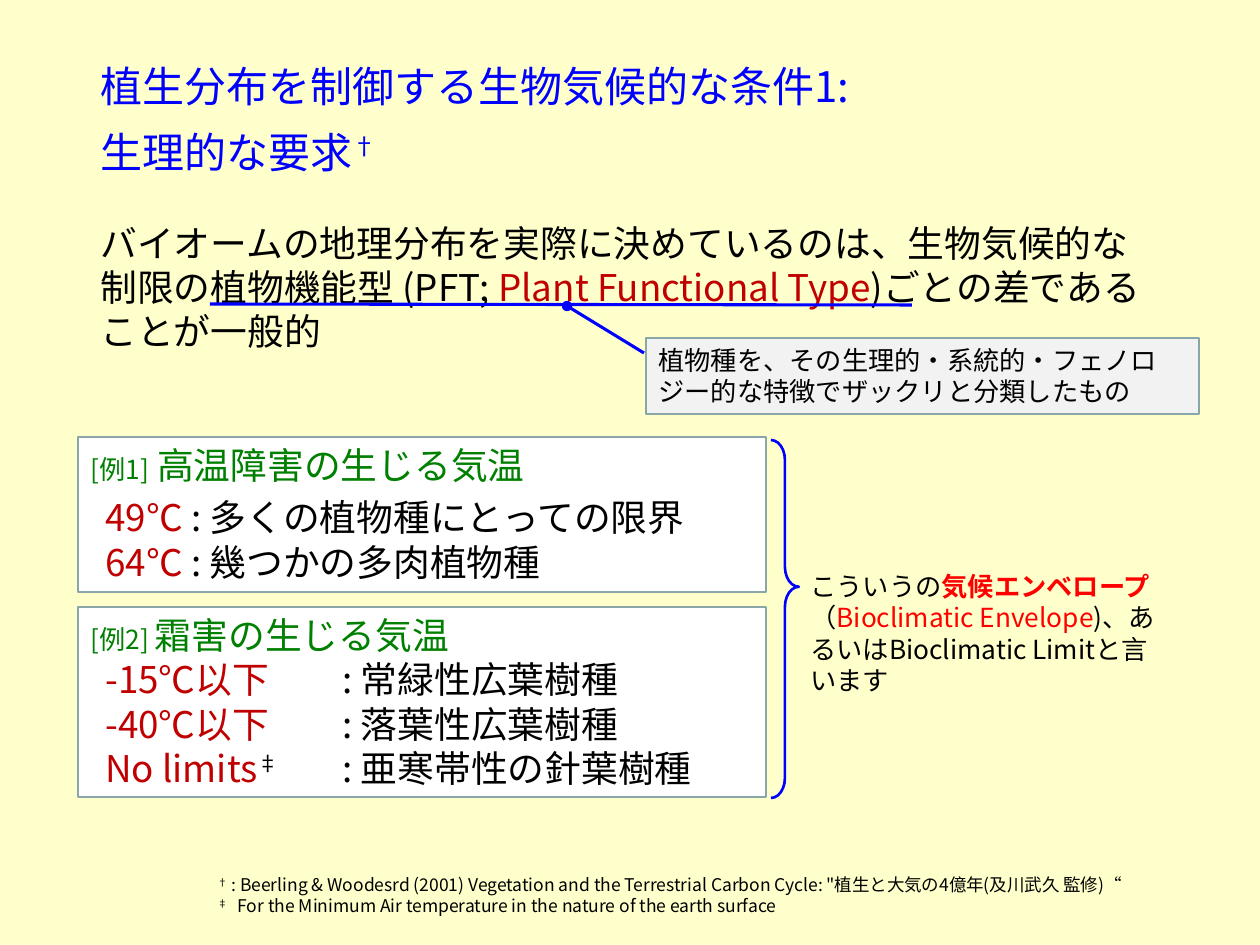
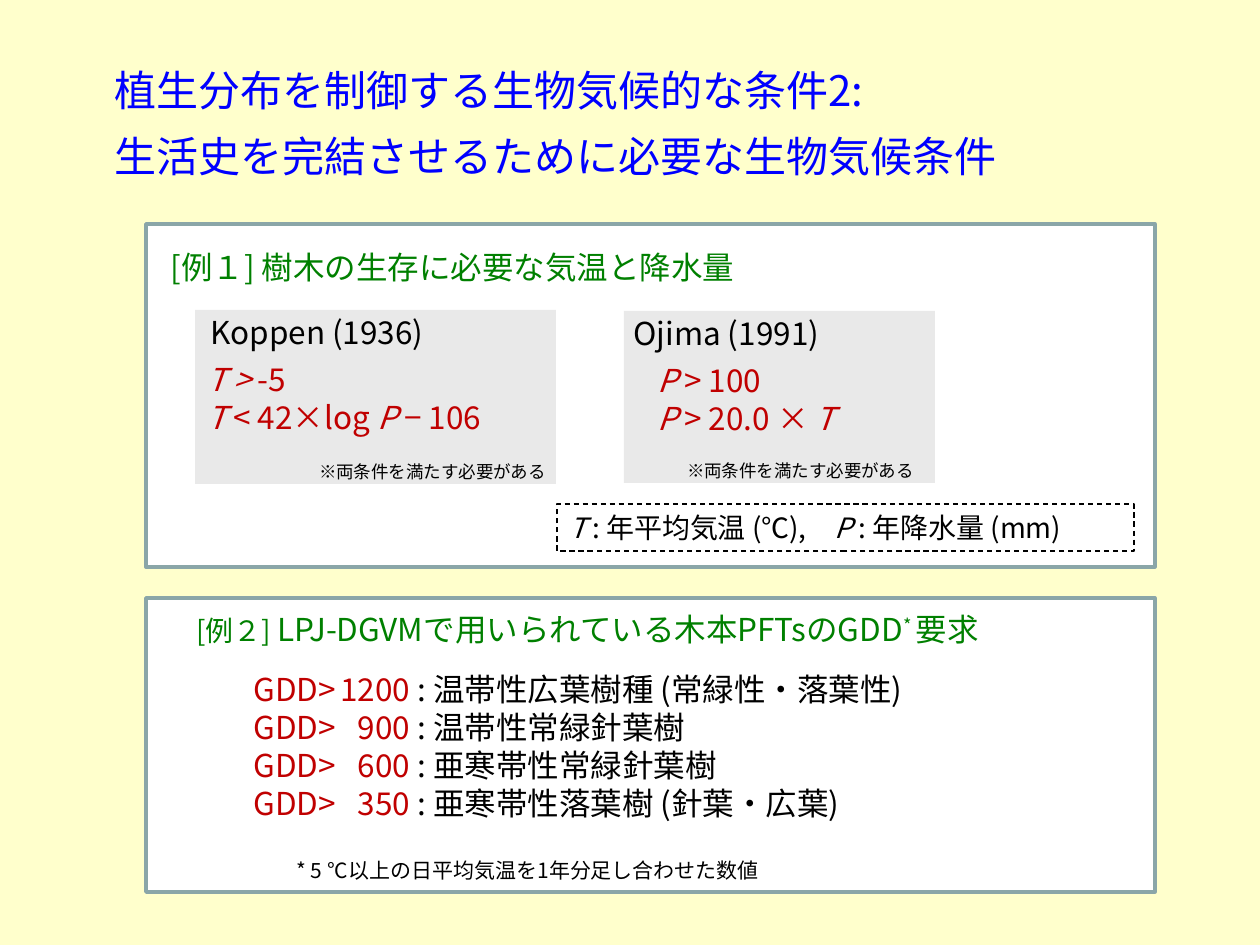
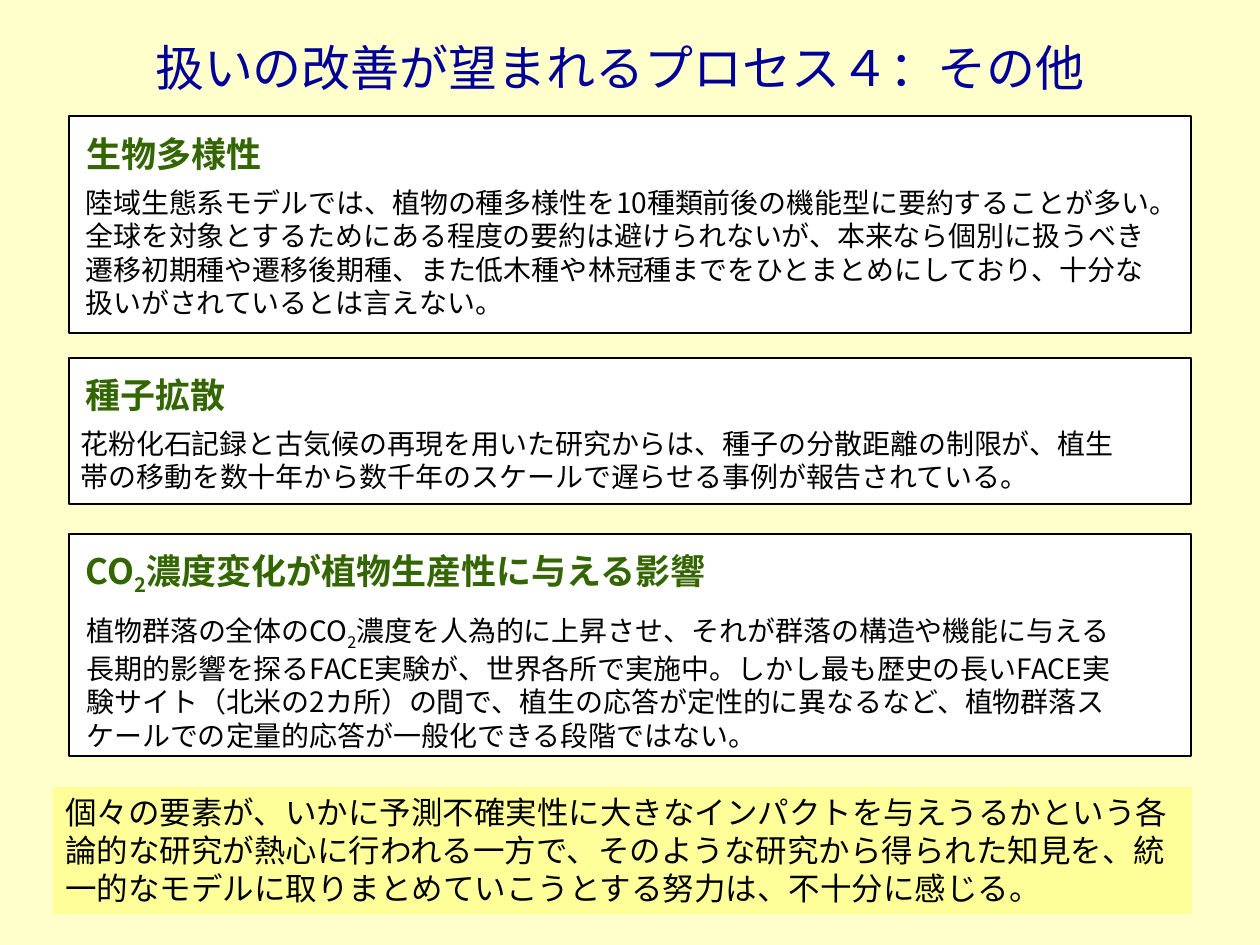
from dataclasses import dataclass
from functools import partial
from typing import Optional

from pptx import Presentation
from pptx.dml.color import RGBColor
from pptx.enum.dml import MSO_LINE
from pptx.enum.shapes import MSO_CONNECTOR, MSO_SHAPE
from pptx.enum.text import MSO_ANCHOR, PP_ALIGN
from pptx.oxml.ns import qn
from pptx.util import Pt
from lxml.etree import SubElement

PX = 914400 / 126
FONT = "Noto Sans CJK JP"
CREAM = RGBColor(0xFF, 0xFF, 0xCC)
YELLOW = RGBColor(0xFF, 0xFF, 0x99)
WHITE = RGBColor(0xFF, 0xFF, 0xFF)
BLACK = RGBColor(0, 0, 0)
BLUE = RGBColor(0, 0, 0xFF)
NAVY = RGBColor(0, 0, 0x99)
GREEN = RGBColor(0, 0x80, 0)
MOSS = RGBColor(0x33, 0x66, 0)
CRIMSON = RGBColor(0xC0, 0, 0)
RED = RGBColor(0xFF, 0, 0)
SLATE = RGBColor(0x8A, 0xA6, 0xA8)
PALE = RGBColor(0xF2, 0xF2, 0xF2)
GREY = RGBColor(0xD9, 0xD9, 0xD9)


@dataclass
class Span:
    text: str
    color: Optional[RGBColor] = None
    size: Optional[float] = None
    bold: Optional[bool] = None
    italic: Optional[bool] = None
    baseline: int = 0


crimson = partial(Span, color=CRIMSON)
red = partial(Span, color=RED)
green = partial(Span, color=GREEN)
italic = partial(Span, italic=True)
raised = partial(Span, baseline=30)
lowered = partial(Span, baseline=-25)

# Each paragraph is a list of plain strings and Spans.
TITLE_1 = [["植生分布を制御する生物気候的な条件1:"], ["生理的な要求", raised("†")]]
TITLE_2 = [["植生分布を制御する生物気候的な条件2:"],
           ["生活史を完結させるために必要な生物気候条件"]]
TITLE_3 = [["扱いの改善が望まれるプロセス４：その他"]]

LEAD = [["バイオームの地理分布を実際に決めているのは、生物気候的な制限の植物機能型 (PFT; ",
         crimson("Plant Functional Type"), ")ごとの差であることが一般的"]]
PFT_NOTE = [["植物種を、その生理的・系統的・フェノロジー的な特徴でザックリと分類したもの"]]
HEAT = [[green("[例1]", size=15), green(" 高温障害の生じる気温")],
        [crimson("\t49℃"), " : 多くの植物種にとっての限界"],
        [crimson("\t64℃"), " : 幾つかの多肉植物種"]]
FROST = [[green("[例2] ", size=15), green("霜害の生じる気温")],
         [crimson("\t-15℃以下\t"), ": 常緑性広葉樹種"],
         [crimson("\t-40℃以下\t"), ": 落葉性広葉樹種"],
         [crimson("\tNo limits"), raised("‡\t"), ": 亜寒帯性の針葉樹種"]]
ENVELOPE = [["こういうの", red("気候エンベロープ", bold=True), "（",
             red("Bioclimatic Envelope"), ")、あるいはBioclimatic Limitと言います"]]
FOOTNOTES = [[raised("†"), " : Beerling & Woodesrd (2001) Vegetation and the Terrestrial "
              "Carbon Cycle: \"植生と大気の4億年(及川武久 監修)“"],
             [raised("‡　"),
              "For the Minimum Air temperature in the nature of the earth surface"]]

TREES_HEAD = [["[例１] 樹木の生存に必要な気温と降水量"]]
BOTH_NEEDED = [["※両条件を満たす必要がある"]]
# grey box, author and its box, conditions and their box, note box
STUDIES = [
    ((195, 310, 361, 174), "Koppen (1936)", (198, 307, 281, 50),
     [[italic("T >"), " -5"], [italic("T "), "< 42×log ", italic("P"), " − 106"]],
     (195, 354, 355, 89), (277, 455, 281, 34)),
    ((624, 311, 311, 172), "Ojima (1991)", (621, 308, 305, 50),
     [[italic("P"), " > 100"], [italic("P"), " > 20.0 × ", italic("T")]],
     (645, 355, 394, 89), (645, 454, 281, 34)),
]
LEGEND = [[italic("T "), ": 年平均気温 (℃),　", italic("P"), " : 年降水量 (mm)"]]
GDD_HEAD = [[Span("[例２] ", size=16), "LPJ-DGVMで用いられている木本PFTsのGDD",
             raised("* "), "要求"]]
GDD_LIMITS = [(1200, "温帯性広葉樹種 (常緑性・落葉性)"), (900, "温帯性常緑針葉樹"),
              (600, "亜寒帯性常緑針葉樹"), (350, "亜寒帯性落葉樹 (針葉・広葉)")]
GDD_NOTE = [["* 5 °C以上の日平均気温を1年分足し合わせた数値"]]

# panel top and height, heading and its box, text and its box
TOPICS = [
    (116, 217, [["生物多様性"]], (74, 126, 252, 55),
     [["陸域生態系モデルでは、植物の種多様性を10種類前後の機能型に要約することが多い。"
       "全球を対象とするためにある程度の要約は避けられないが、本来なら個別に扱うべき"
       "遷移初期種や遷移後期種、また低木種や林冠種までをひとまとめにしており、"
       "十分な扱いがされているとは言えない。"]], (73, 179, 1092, 149)),
    (358, 146, [["種子拡散"]], (73, 367, 252, 55),
     [["花粉化石記録と古気候の再現を用いた研究からは、種子の分散距離の制限が、"
       "植生帯の移動を数十年から数千年のスケールで遅らせる事例が報告されている。"]],
     (68, 420, 1076, 81)),
    (534, 222, [["CO", lowered("2"), "濃度変化が植物生産性に与える影響"]], (73, 543, 819, 55),
     [["植物群落の全体のCO", lowered("2"),
       "濃度を人為的に上昇させ、それが群落の構造や機能に与える長期的影響を探るFACE実験が、"
       "世界各所で実施中。しかし最も歴史の長いFACE実験サイト（北米の2カ所）の間で、"
       "植生の応答が定性的に異なるなど、植物群落スケールでの定量的応答が"
       "一般化できる段階ではない。"]], (74, 607, 1070, 149)),
]
CONCLUSION = [["個々の要素が、いかに予測不確実性に大きなインパクトを与えうるかという"
               "各論的な研究が熱心に行われる一方で、そのような研究から得られた知見を、"
               "統一的なモデルに取りまとめていこうとする努力は、不十分に感じる。"]]


def px(*lengths):
    return [round(length * PX) for length in lengths]


def add_page(deck):
    page = deck.slides.add_slide(deck.slide_layouts[6])
    page.background.fill.solid()
    page.background.fill.fore_color.rgb = CREAM
    return page


def add_span(para, span):
    if isinstance(span, str):
        span = Span(span)
    run = para.add_run()
    run.text = span.text
    font = run.font
    if span.color is not None:
        font.color.rgb = span.color
    if span.size:
        font.size = Pt(span.size)
    if span.bold:
        font.bold = True
    if span.italic:
        font.italic = True
    if span.baseline:
        run._r.get_or_add_rPr().set("baseline", str(span.baseline * 1000))


def write(shape, paragraphs, size, color=BLACK, bold=None, align=PP_ALIGN.LEFT,
          anchor=MSO_ANCHOR.TOP, gap=0, tabs=(), leading=None):
    """Fill a shape with text; gap is the space in points after the first paragraph."""
    frame = shape.text_frame
    frame.word_wrap = True
    frame.vertical_anchor = anchor
    for index, spans in enumerate(paragraphs):
        para = frame.add_paragraph() if index else frame.paragraphs[0]
        para.alignment = align
        if gap and index == 0:
            para.space_after = Pt(gap)
        if leading:
            para.line_spacing = Pt(leading)
        properties = para._p.get_or_add_pPr()
        if tabs:
            tab_list = SubElement(properties, qn("a:tabLst"))
            for place, side in tabs:
                SubElement(tab_list, qn("a:tab"), pos=str(px(place)[0]), algn=side)
        para.font.name = FONT
        para.font.size = Pt(size)
        para.font.color.rgb = color
        para.font.bold = bold
        SubElement(properties.get_or_add_defRPr(), qn("a:ea"), typeface=FONT)
        for span in spans:
            add_span(para, span)


def add_text(page, box, paragraphs, size, **style):
    write(page.shapes.add_textbox(*px(*box)), paragraphs, size, **style)


def add_panel(page, box, fill=None, line=None, width=0.75, kind=MSO_SHAPE.RECTANGLE):
    panel = page.shapes.add_shape(kind, *px(*box))
    panel.shadow.inherit = False
    if fill is None:
        panel.fill.background()
    else:
        panel.fill.solid()
        panel.fill.fore_color.rgb = fill
    if line is None:
        panel.line.fill.background()
    else:
        panel.line.color.rgb = line
        panel.line.width = Pt(width)
    return panel


def add_line(page, *ends):
    line = page.shapes.add_connector(MSO_CONNECTOR.STRAIGHT, *px(*ends))
    line.line.color.rgb = BLUE
    line.line.width = Pt(1.75)
    SubElement(line._element.spPr, qn("a:effectLst"))
    return line


def add_two_line_title(page, box, paragraphs):
    add_text(page, box, paragraphs, 24, color=BLUE, gap=9)


def build_requirements(deck):
    page = add_page(deck)
    add_text(page, (88, 214, 1084, 146), LEAD, 21, anchor=MSO_ANCHOR.MIDDLE)
    add_text(page, (205, 868, 1042, 55), FOOTNOTES, 10)
    add_two_line_title(page, (88, 54, 1071, 132), TITLE_1)
    columns = [(15, "l"), (252, "l")]
    for paragraphs, top, height, gap in [(HEAT, 437, 155, 4.5), (FROST, 607, 190, 0)]:
        panel = add_panel(page, (78, top, 688, height), WHITE, SLATE)
        write(panel, paragraphs, 21, gap=gap, tabs=columns)
    write(add_panel(page, (646, 338, 553, 76), PALE, SLATE), PFT_NOTE, 15)
    brace = add_panel(page, (771, 440, 28, 358), line=BLUE, width=1.5,
                      kind=MSO_SHAPE.RIGHT_BRACE)
    brace.adjustments[0], brace.adjustments[1] = 0.71, 0.41
    add_text(page, (798, 564, 388, 140), ENVELOPE, 15)
    add_line(page, 210, 304, 912, 305)
    pointer = add_line(page, 644, 353, 567, 306)
    SubElement(pointer.line._get_or_add_ln(), qn("a:tailEnd"), type="oval")


def build_life_cycle(deck):
    page = add_page(deck)
    for top, height in [(598, 294), (224, 343)]:
        add_panel(page, (146, top, 1009, height), WHITE, SLATE, 2)
    add_text(page, (158, 242, 766, 50), TREES_HEAD, 18, color=GREEN)
    for panel_box, author, author_box, limits, limits_box, note_box in STUDIES:
        panel = add_panel(page, panel_box, GREY)
        tint = panel._element.spPr.find(".//" + qn("a:srgbClr"))
        SubElement(tint, qn("a:alpha"), val="57000")
        add_text(page, limits_box, limits, 18, color=CRIMSON)
        add_text(page, author_box, [[author]], 18)
        add_text(page, note_box, BOTH_NEEDED, 10, align=PP_ALIGN.RIGHT)
    legend = add_panel(page, (557, 504, 577, 47), line=BLACK)
    legend.line.dash_style = MSO_LINE.DASH
    write(legend, LEGEND, 16)
    add_text(page, (184, 609, 950, 48), GDD_HEAD, 18, color=GREEN, leading=18.8)
    add_text(page, (284, 851, 707, 38), GDD_NOTE, 12)
    rows = [[crimson(f"GDD>\t{limit}\t"), f": {trees}"] for limit, trees in GDD_LIMITS]
    add_text(page, (241, 664, 762, 165), rows, 18, tabs=[(157, "r"), (164, "l")])
    add_two_line_title(page, (102, 58, 1056, 132), TITLE_2)


def build_other_processes(deck):
    page = add_page(deck)
    add_text(page, (53, 18, 1134, 98), TITLE_3, 28, color=NAVY,
             align=PP_ALIGN.CENTER, anchor=MSO_ANCHOR.MIDDLE)
    for top, height, heading, heading_box, body, body_box in TOPICS:
        add_panel(page, (69, top, 1122, height), WHITE, BLACK)
        add_text(page, heading_box, heading, 20, color=MOSS, bold=True)
        add_text(page, body_box, body, 16)
    write(add_panel(page, (53, 787, 1139, 127), YELLOW), CONCLUSION, 18)


def main():
    deck = Presentation()
    deck.slide_width, deck.slide_height = px(1260, 945)
    build_requirements(deck)
    build_life_cycle(deck)
    build_other_processes(deck)
    deck.save("out.pptx")


if __name__ == "__main__":
    main()
